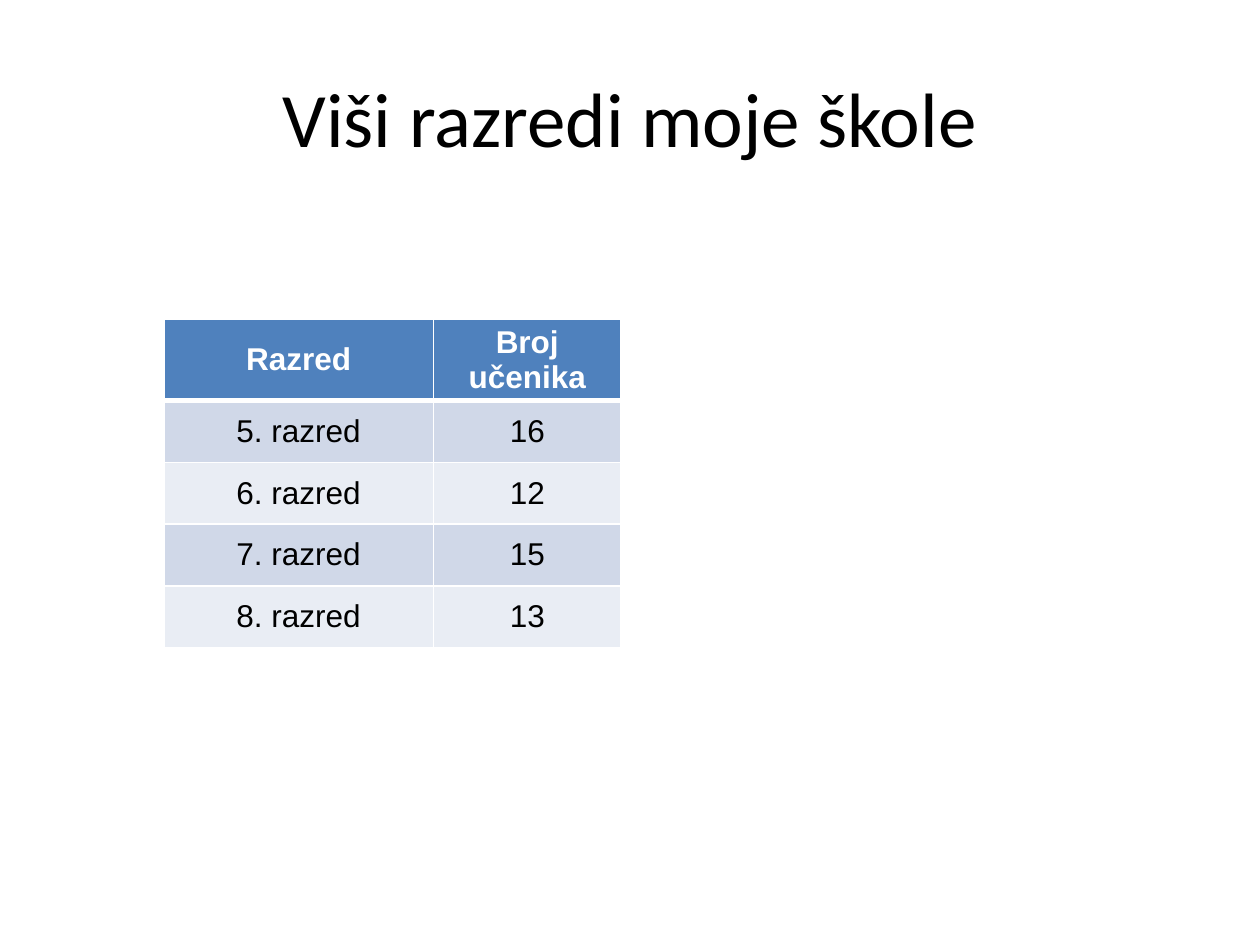
from lxml import etree
from pptx import Presentation
from pptx.dml.color import RGBColor
from pptx.enum import text
from pptx.oxml import ns
from pptx.util import Inches, Pt

COLORS = {
    "header": "4F81BD",
    "odd": "D0D8E8",
    "even": "E9EDF4",
    "light": "FFFFFF",
    "dark": "000000",
}
GRADES = [
    ("Razred", "Broj učenika"),
    ("5. razred", "16"),
    ("6. razred", "12"),
    ("7. razred", "15"),
    ("8. razred", "13"),
]
COLUMN_WIDTHS = (2.14, 1.49)
HEADER_HEIGHT, ROW_HEIGHT = 0.65, 0.49


def color(name):
    return RGBColor.from_string(COLORS[name])


def format_para(para, font_name, size, color_name, bold=False):
    para.alignment = text.PP_ALIGN.CENTER
    para.font.name = font_name
    para.font.size = Pt(size)
    para.font.bold = bold
    para.font.color.rgb = color(color_name)


def add_title(page, left, top, width, height):
    title = page.shapes.title
    title.left, title.top = Inches(left), Inches(top)
    title.width, title.height = Inches(width), Inches(height)
    frame = title.text_frame
    frame.text = "Viši razredi moje škole"
    frame.vertical_anchor = text.MSO_ANCHOR.MIDDLE
    format_para(frame.paragraphs[0], "Calibri", 44, "dark")


def set_borders(cell, widths):
    """Draw light borders; widths maps the sides L, R, T and B to points."""
    properties = cell._tc.get_or_add_tcPr()
    for index, (side, width) in enumerate(widths.items()):
        line = etree.Element(ns.qn(f"a:ln{side}"), w=str(Pt(width)))
        fill = etree.SubElement(line, ns.qn("a:solidFill"))
        etree.SubElement(fill, ns.qn("a:srgbClr"), val=COLORS["light"])
        properties.insert(index, line)


def format_cell(cell, row):
    is_header = row == 0
    fill_name = "header" if is_header else "odd" if row % 2 else "even"
    cell.fill.solid()
    cell.fill.fore_color.rgb = color(fill_name)
    cell.vertical_anchor = text.MSO_ANCHOR.MIDDLE
    cell.margin_top = cell.margin_bottom = Inches(0.03)
    format_para(cell.text_frame.paragraphs[0], "Arial", 18,
                "light" if is_header else "dark", is_header)
    set_borders(cell, {"L": 1, "R": 1,
                       "T": 3 if row == 1 else 1,
                       "B": 3 if is_header else 1})


def add_grade_table(page, left, top):
    heights = [HEADER_HEIGHT] + [ROW_HEIGHT] * (len(GRADES) - 1)
    table = page.shapes.add_table(
        len(GRADES), len(COLUMN_WIDTHS), Inches(left), Inches(top),
        Inches(sum(COLUMN_WIDTHS)), Inches(sum(heights))).table
    for column, width in zip(table.columns, COLUMN_WIDTHS):
        column.width = Inches(width)
    for row, (height, values) in enumerate(zip(heights, GRADES)):
        table.rows[row].height = Inches(height)
        for column, value in enumerate(values):
            cell = table.cell(row, column)
            cell.text = value
            format_cell(cell, row)


def main():
    deck = Presentation()
    deck.slide_width, deck.slide_height = Inches(10), Inches(7.5)
    page = deck.slides.add_slide(deck.slide_layouts.get_by_name("Title Only"))
    add_title(page, 0.5, 0.3, 9, 1.25)
    add_grade_table(page, 1.3, 2.53)
    deck.save("out.pptx")


if __name__ == "__main__":
    main()
